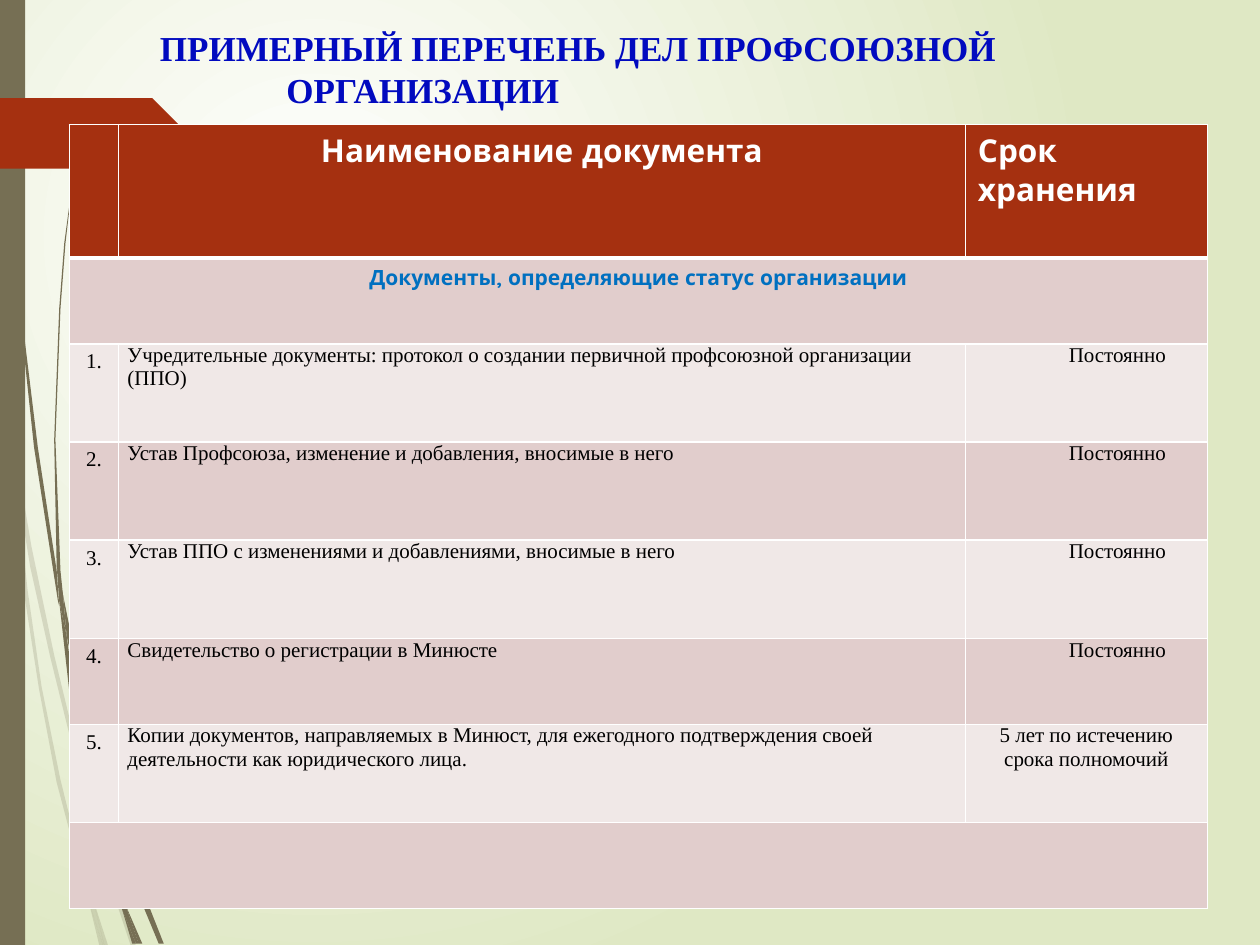
from dataclasses import dataclass

import pptx
import pptx.dml.color
import pptx.enum.shapes
import pptx.enum.text
import pptx.oxml
import pptx.oxml.ns
import pptx.util
from pptx.util import Cm, Pt

RGB = pptx.dml.color.RGBColor
ALIGN = pptx.enum.text.PP_ALIGN
SHAPES = pptx.enum.shapes.MSO_SHAPE
NS = pptx.oxml.ns.nsdecls("a")

WHITE = RGB(0xFF, 0xFF, 0xFF)
BLACK = RGB(0, 0, 0)
PALE_GREEN = RGB(0xDF, 0xE8, 0xC4)
OLIVE = RGB(0x76, 0x6F, 0x54)
RUST = RGB(0xA5, 0x30, 0x10)
TITLE_BLUE = RGB(0x01, 0x0A, 0xBF)
SECTION_BLUE = RGB(0x00, 0x70, 0xC0)
ROSE = RGB(0xE1, 0xCD, 0xCC)
LIGHT_ROSE = RGB(0xF0, 0xE8, 0xE7)

SERIF = "Times New Roman"
SANS = "Quicksand"
STRAND_UNIT = Cm(0.0254)  # grid step of the strand outlines
COLUMN_WIDTHS = [Cm(0.99), Cm(17.07), Cm(4.88)]
ROW_HEIGHTS = [Cm(h) for h in (2.69, 1.73, 1.98, 1.98, 1.98, 1.73, 1.98, 1.73)]


@dataclass(frozen=True)
class TextStyle:
    font: str
    size: float
    color: RGB
    bold: bool = False


@dataclass(frozen=True)
class Document:
    name: str
    term: str = "Постоянно"
    term_indent: int = Cm(1.25)


HEADER = TextStyle(SANS, 18, WHITE, True)
SECTION = TextStyle(SANS, 12, SECTION_BLUE, True)
BODY = TextStyle(SERIF, 12, BLACK)
TITLE = TextStyle(SERIF, 20, TITLE_BLUE, True)

DOCUMENTS = [
    Document("Учредительные документы: протокол о создании первичной "
             "профсоюзной организации (ППО)"),
    Document("Устав Профсоюза, изменение и добавления, вносимые в него"),
    Document("Устав ППО с изменениями и добавлениями, вносимые в него"),
    Document("Свидетельство о регистрации в Минюсте"),
    Document("Копии документов, направляемых в Минюст, для ежегодного "
             "подтверждения своей деятельности как юридического лица.",
             "5 лет по истечению срока полномочий", 0),
]

FAINT_STRANDS = [
    [(8, 350), (6, 322), (0, 282), (0, 299), (7, 344)],
    [(40, 522), (59, 599), (59, 586), (43, 520), (25, 434), (10, 345), (12, 376), (24, 450)],
    [(64, 607), (61, 596), (61, 610), (85, 694), (104, 751), (108, 751), (88, 692)],
    [(83, 751), (86, 751), (73, 711)],
    [(64, 683), (48, 619), (33, 545), (22, 469), (12, 376), (8, 350), (19, 470), (31, 547),
     (45, 621), (64, 693), (70, 714), (69, 707)],
    [(58, 599), (60, 646), (64, 683), (67, 692), (73, 711), (72, 706), (63, 646), (61, 608)],
    [(61, 584), (65, 522), (76, 462), (91, 404), (111, 349), (134, 295), (159, 245), (187, 198),
     (201, 175), (217, 154), (217, 153), (201, 175), (186, 197), (158, 244), (133, 294),
     (110, 348), (90, 403), (75, 461), (64, 522), (59, 584), (59, 586), (61, 596)],
    [(70, 714), (79, 751), (82, 751)],
    [(61, 608), (61, 596), (59, 586), (58, 599)],
    [(67, 692), (65, 683), (70, 714), (82, 751), (83, 751), (73, 711)],
]
SOLID_STRANDS = [
    [(5, 110), (14, 233), (27, 355), (46, 477), (47, 481), (45, 453), (30, 355), (15, 232),
     (6, 109), (4, 48), (3, 0), (2, 0), (3, 48)],
    [(73, 592), (88, 645), (88, 631), (77, 590), (62, 532), (50, 472), (53, 505), (62, 549)],
    [(94, 649), (91, 641), (91, 656), (109, 708), (126, 749), (130, 749), (113, 706)],
    [(91, 691), (81, 657), (69, 607), (60, 556), (53, 505), (47, 477), (56, 557), (65, 608),
     (77, 659), (92, 708), (97, 722)],
    [(50, 472), (48, 453), (44, 349), (48, 245), (52, 193), (58, 141), (51, 193), (47, 245),
     (43, 349), (45, 449), (49, 472)],
    [(110, 749), (113, 749), (100, 719)],
    [(47, 477), (53, 505), (50, 472), (45, 449)],
    [(91, 633), (95, 592), (103, 552), (115, 513), (131, 476), (149, 440), (169, 406), (191, 374),
     (203, 359), (216, 344), (215, 344), (203, 358), (191, 373), (168, 405), (148, 439),
     (129, 474), (113, 512), (101, 551), (93, 590), (88, 631), (91, 641)],
    [(97, 722), (105, 749), (108, 749)],
    [(88, 645), (91, 691), (96, 706), (100, 719), (91, 656)],
    [(88, 645), (91, 656), (91, 641), (88, 631)],
    [(96, 706), (91, 691), (97, 722), (108, 749), (110, 749), (100, 719)],
]


def paint(shape, color: RGB, opacity: int = 100) -> None:
    shape.shadow.inherit = False
    shape.line.fill.background()
    shape.fill.solid()
    shape.fill.fore_color.rgb = color
    if opacity < 100:
        clr = shape.fill._xPr.find(".//" + pptx.oxml.ns.qn("a:srgbClr"))
        clr.append(pptx.oxml.parse_xml(f'<a:alpha {NS} val="{opacity * 1000}"/>'))


def draw_strand(slide, outline: list[tuple[int, int]], opacity: int) -> None:
    builder = slide.shapes.build_freeform(*outline[0], scale=STRAND_UNIT)
    builder.add_line_segments(outline[1:], close=True)
    paint(builder.convert_to_shape(), OLIVE, opacity)


def set_background(slide) -> None:
    """Radial gradient, white towards the upper left."""
    fill = slide.background.fill
    fill.gradient()
    for stop, color in zip(fill.gradient_stops, (WHITE, PALE_GREEN)):
        stop.color.rgb = color
    linear = slide.background._cSld.find(".//" + pptx.oxml.ns.qn("a:lin"))
    linear.getparent().replace(linear, pptx.oxml.parse_xml(
        f'<a:path {NS} path="circle">'
        '<a:fillToRect l="50000" t="50000" r="100000" b="100000"/></a:path>'))


def style_paragraph(paragraph, style: TextStyle, align=ALIGN.LEFT) -> None:
    paragraph.alignment = align
    font = paragraph.font
    font.name, font.size, font.bold = style.font, Pt(style.size), style.bold
    font.color.rgb = style.color


def write_title(slide) -> None:
    title = slide.shapes.title
    title.left, title.top, title.width, title.height = Cm(2.97), Cm(0.41), Cm(20.04), Cm(2)
    frame = title.text_frame
    frame.word_wrap = True
    frame.auto_size = pptx.enum.text.MSO_AUTO_SIZE.NONE
    frame.vertical_anchor = pptx.enum.text.MSO_ANCHOR.TOP
    frame.text = "ПРИМЕРНЫЙ ПЕРЕЧЕНЬ ДЕЛ ПРОФСОЮЗНОЙ\nОРГАНИЗАЦИИ"
    for paragraph, indent in zip(frame.paragraphs, (0, Cm(2.55))):
        style_paragraph(paragraph, TITLE)
        paragraph.line_spacing = Pt(24)
        paragraph._p.get_or_add_pPr().set("marL", str(indent))


def write(cell, text: str, style: TextStyle, align=ALIGN.LEFT, indent: int = 0) -> None:
    cell.text = text
    paragraph = cell.text_frame.paragraphs[0]
    style_paragraph(paragraph, style, align)
    if indent:
        paragraph._p.get_or_add_pPr().set("indent", str(indent))


def format_cell(cell, color: RGB, top: int, bottom: int) -> None:
    cell.fill.solid()
    cell.fill.fore_color.rgb = color
    edges = {"lnL": 1, "lnR": 1, "lnT": top, "lnB": bottom}
    for place, (edge, width) in enumerate(edges.items()):
        cell._tc.get_or_add_tcPr().insert(place, pptx.oxml.parse_xml(
            f'<a:{edge} {NS} w="{Pt(width)}"><a:solidFill>'
            f'<a:srgbClr val="{WHITE}"/></a:solidFill></a:{edge}>'))


def add_register(slide) -> None:
    table = slide.shapes.add_table(
        len(ROW_HEIGHTS), len(COLUMN_WIDTHS), Cm(1.4), Cm(2.51),
        sum(COLUMN_WIDTHS), sum(ROW_HEIGHTS)).table
    for column, width in zip(table.columns, COLUMN_WIDTHS):
        column.width = width
    for index, (row, height) in enumerate(zip(table.rows, ROW_HEIGHTS)):
        row.height = height
        color = RUST if index == 0 else ROSE if index % 2 else LIGHT_ROSE
        for cell in row.cells:
            format_cell(cell, color, 3 if index == 1 else 1, 3 if index == 0 else 1)

    write(table.cell(0, 1), "Наименование документа", HEADER, ALIGN.CENTER)
    write(table.cell(0, 2), "Срок хранения", HEADER)
    last = len(ROW_HEIGHTS) - 1
    for index in (1, last):
        table.cell(index, 0).merge(table.cell(index, 2))
    write(table.cell(1, 0), "Документы, определяющие статус организации", SECTION, ALIGN.CENTER)

    for number, document in enumerate(DOCUMENTS, 1):
        number_cell, name_cell, term_cell = table.rows[number + 1].cells
        write(number_cell, f"{number}.", BODY, ALIGN.CENTER)
        write(name_cell, document.name, BODY)
        write(term_cell, document.term, BODY, ALIGN.CENTER, document.term_indent)
        for cell in (name_cell, term_cell):
            cell.margin_left = cell.margin_right = Cm(0.18)
            cell.margin_top = cell.margin_bottom = 0


def main() -> None:
    deck = pptx.Presentation()
    deck.slide_width, deck.slide_height = Cm(25.4), Cm(19.05)
    slide = deck.slides.add_slide(deck.slide_layouts[5])
    set_background(slide)
    for strands, opacity in ((FAINT_STRANDS, 20), (SOLID_STRANDS, 100)):
        for outline in strands:
            draw_strand(slide, outline, opacity)
    side_bar = slide.shapes.add_shape(SHAPES.RECTANGLE, 0, 0, Cm(0.51), deck.slide_height)
    paint(side_bar, OLIVE)
    pointer = slide.shapes.add_shape(SHAPES.PENTAGON, 0, Cm(1.98), Cm(3.78), Cm(1.42))
    paint(pointer, RUST)
    write_title(slide)
    add_register(slide)
    deck.save("out.pptx")


if __name__ == "__main__":
    main()
